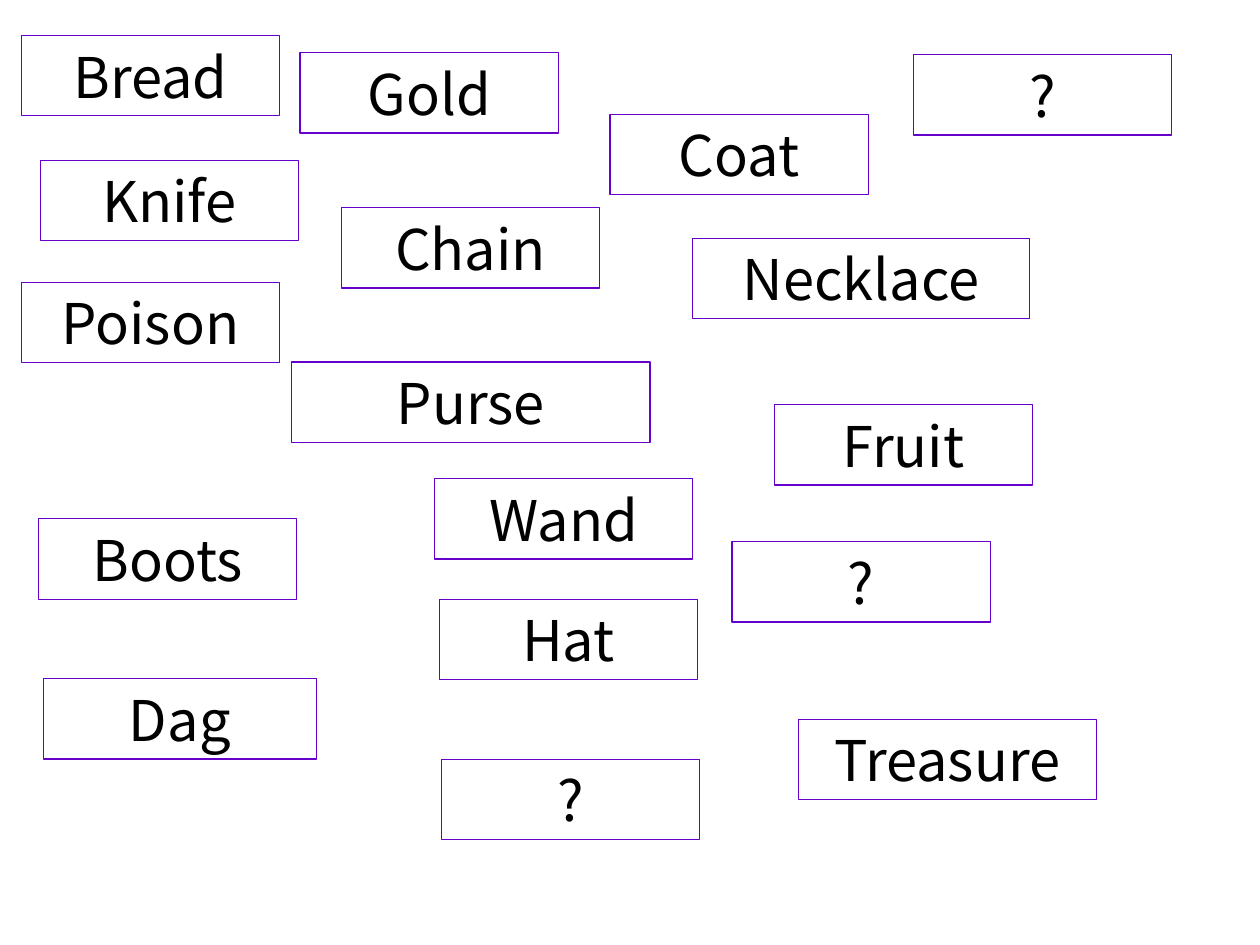
"""Build a slide of scattered word cards for a treasure story."""
from dataclasses import dataclass

from pptx import Presentation
from pptx.dml.color import RGBColor
from pptx.enum.shapes import MSO_SHAPE
from pptx.enum.text import MSO_ANCHOR, PP_ALIGN
from pptx.slide import Slide
from pptx.util import Pt


@dataclass(frozen=True)
class Theme:
    font: str = "Noto Sans CJK KR"
    size: float = 32
    ink: RGBColor = RGBColor(0, 0, 0)
    outline: RGBColor = RGBColor(0x66, 0x00, 0xCC)
    outline_width: float = 0.75


@dataclass(frozen=True)
class WordCard:
    word: str
    left: float
    top: float
    width: float = 147.6
    height: float = 46


THEME = Theme()
WORD_CARDS = (
    WordCard("Bread", 12.2, 20.2),
    WordCard("Knife", 23, 91.6),
    WordCard("Poison", 12.2, 161.3),
    WordCard("Gold", 171.5, 30.1),
    WordCard("Chain", 195.1, 118.6),
    WordCard("Purse", 166.5, 206.9, 205),
    WordCard("Boots", 22, 296.4),
    WordCard("Coat", 348.6, 65.3),
    WordCard("Necklace", 395.7, 136.1, 192.8),
    WordCard("Wand", 248.3, 273.4),
    WordCard("Fruit", 442.4, 231.2),
    WordCard("Dag", 24.7, 387.8, 156.2),
    WordCard("Treasure", 456.2, 411, 170.4),
    WordCard("?", 521.9, 31.2),
    WordCard("?", 418.3, 309.4),
    WordCard("Hat", 251, 342.4),
    WordCard("?", 252.1, 433.9),
)


def draw_card(page: Slide, card: WordCard) -> None:
    box = page.shapes.add_shape(
        MSO_SHAPE.RECTANGLE, Pt(card.left), Pt(card.top), Pt(card.width), Pt(card.height)
    )
    box.shadow.inherit = False
    box.fill.background()
    box.line.color.rgb = THEME.outline
    box.line.width = Pt(THEME.outline_width)
    frame = box.text_frame
    frame.word_wrap = True
    frame.vertical_anchor = MSO_ANCHOR.MIDDLE
    frame.margin_top = frame.margin_bottom = Pt(0)
    para = frame.paragraphs[0]
    para.text = card.word
    para.alignment = PP_ALIGN.CENTER
    para.font.name = THEME.font
    para.font.size = Pt(THEME.size)
    para.font.color.rgb = THEME.ink


def main() -> None:
    deck = Presentation()
    deck.slide_width, deck.slide_height = Pt(720), Pt(540)
    page = deck.slides.add_slide(deck.slide_layouts[6])
    for card in WORD_CARDS:
        draw_card(page, card)
    deck.save("out.pptx")


if __name__ == "__main__":
    main()
